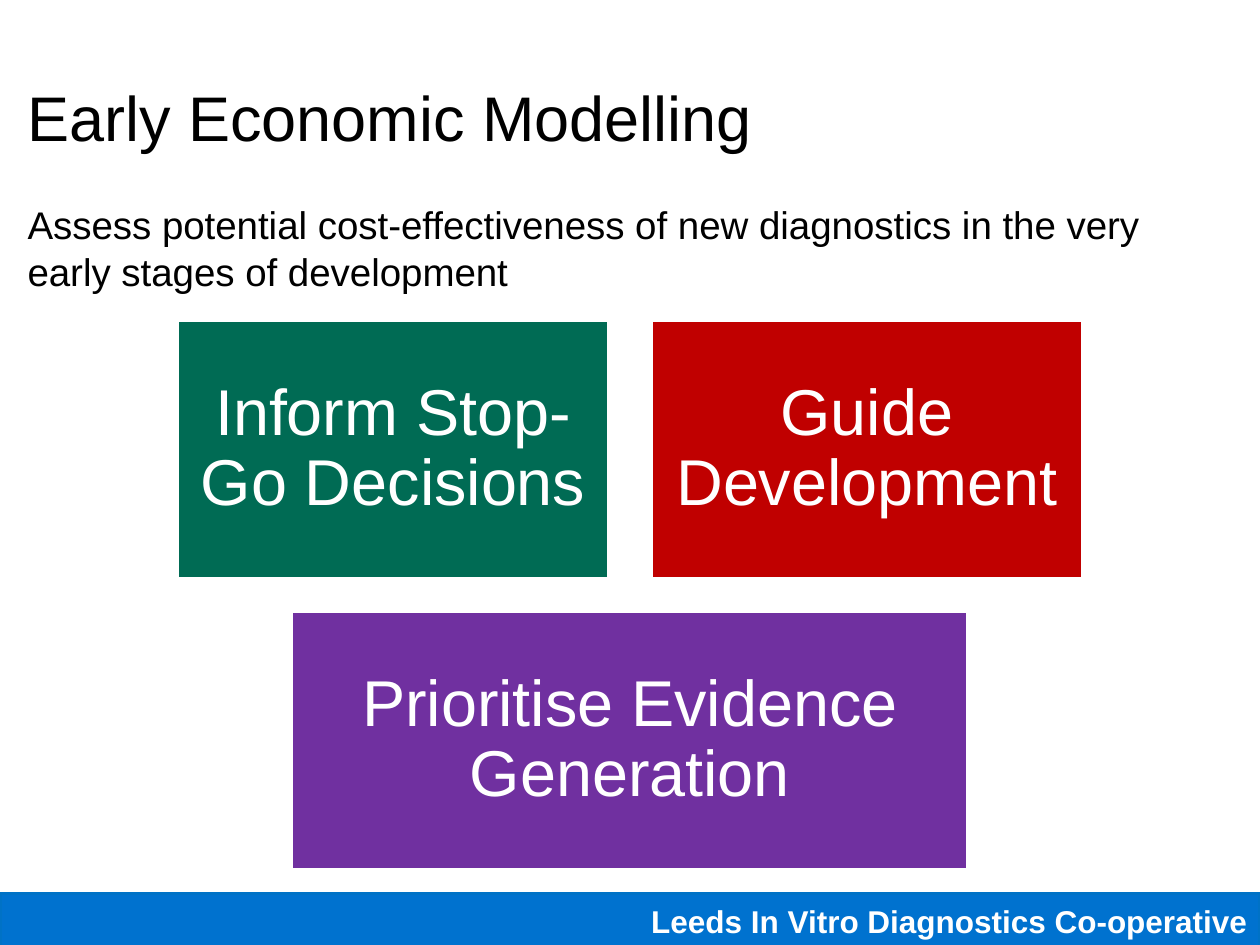
from pptx import Presentation
from pptx.dml.color import RGBColor
from pptx.enum.shapes import MSO_SHAPE
from pptx.enum.text import MSO_ANCHOR, PP_ALIGN
from pptx.util import Inches, Pt

RECTANGLE = MSO_SHAPE.RECTANGLE
TOP, MIDDLE = MSO_ANCHOR.TOP, MSO_ANCHOR.MIDDLE
LEFT, CENTER, RIGHT = PP_ALIGN.LEFT, PP_ALIGN.CENTER, PP_ALIGN.RIGHT

BLACK = RGBColor(0x00, 0x00, 0x00)
WHITE = RGBColor(0xFF, 0xFF, 0xFF)
FOOTER_BLUE = RGBColor(0x00, 0x72, 0xCF)
FOOTER_EDGE = RGBColor(0x00, 0x72, 0xC6)
GREEN = RGBColor(0x00, 0x6B, 0x54)
RED = RGBColor(0xC0, 0x00, 0x00)
PURPLE = RGBColor(0x70, 0x30, 0xA0)

SLIDE_WIDTH, SLIDE_HEIGHT = 10, 7.5
AIM_HEIGHT = 2.05
NARROW, WIDE = 3.42, 5.37
COLUMN_GAP = 0.34
UPPER_ROW, LOWER_ROW = 2.54, 4.85


def write(frame, text, size, color=BLACK, bold=False, align=LEFT,
          anchor=TOP, line_spacing=None, inset=None):
    """Fill a text frame with one formatted paragraph."""
    frame.word_wrap = True
    frame.vertical_anchor = anchor
    if inset is not None:
        frame.margin_left = frame.margin_right = Inches(inset)
        frame.margin_top = frame.margin_bottom = Inches(inset)
    paragraph = frame.paragraphs[0]
    paragraph.alignment = align
    paragraph.line_spacing = line_spacing
    run = paragraph.add_run()
    run.text = text
    run.font.name = "Arial"
    run.font.size = Pt(size)
    run.font.bold = bold
    run.font.color.rgb = color


def add_text(slide, bounds, text, size, **style):
    """Add a text box at bounds given in inches."""
    box = slide.shapes.add_textbox(*map(Inches, bounds))
    write(box.text_frame, text, size, **style)


def add_block(slide, bounds, fill, edge, text, size, **style):
    """Add a filled rectangle carrying white text."""
    block = slide.shapes.add_shape(RECTANGLE, *map(Inches, bounds))
    block.shadow.inherit = False
    block.fill.solid()
    block.fill.fore_color.rgb = fill
    block.line.color.rgb = edge
    block.line.width = Pt(2)
    write(block.text_frame, text, size, color=WHITE, anchor=MIDDLE, **style)


def add_aims(slide):
    """Add the three aims, each row centred on the slide."""
    rows = (
        (UPPER_ROW, NARROW, (("Inform Stop-Go Decisions", GREEN),
                             ("Guide Development", RED))),
        (LOWER_ROW, WIDE, (("Prioritise Evidence Generation", PURPLE),)),
    )
    for top, width, aims in rows:
        step = width + COLUMN_GAP
        row_left = (SLIDE_WIDTH - step * len(aims) + COLUMN_GAP) / 2
        for column, (aim, fill) in enumerate(aims):
            bounds = (row_left + column * step, top, width, AIM_HEIGHT)
            add_block(slide, bounds, fill, WHITE, aim, 37,
                      align=CENTER, line_spacing=0.9, inset=0.15)


def main():
    """Build and save the slide."""
    deck = Presentation()
    deck.slide_width = Inches(SLIDE_WIDTH)
    deck.slide_height = Inches(SLIDE_HEIGHT)
    slide = deck.slides.add_slide(deck.slide_layouts[6])
    add_block(slide, (0, 7.09, SLIDE_WIDTH, 0.44), FOOTER_BLUE, FOOTER_EDGE,
              "Leeds In Vitro Diagnostics Co-operative", 18,
              bold=True, align=RIGHT)
    add_text(slide, (0.12, 0.3, 9, 1.25), "Early Economic Modelling", 36,
             anchor=MIDDLE)
    add_text(slide, (0.12, 1.55, 9.38, 0.84),
             "Assess potential cost-effectiveness of new diagnostics "
             "in the very early stages of development", 22)
    add_aims(slide)
    deck.save("out.pptx")


if __name__ == "__main__":
    main()
